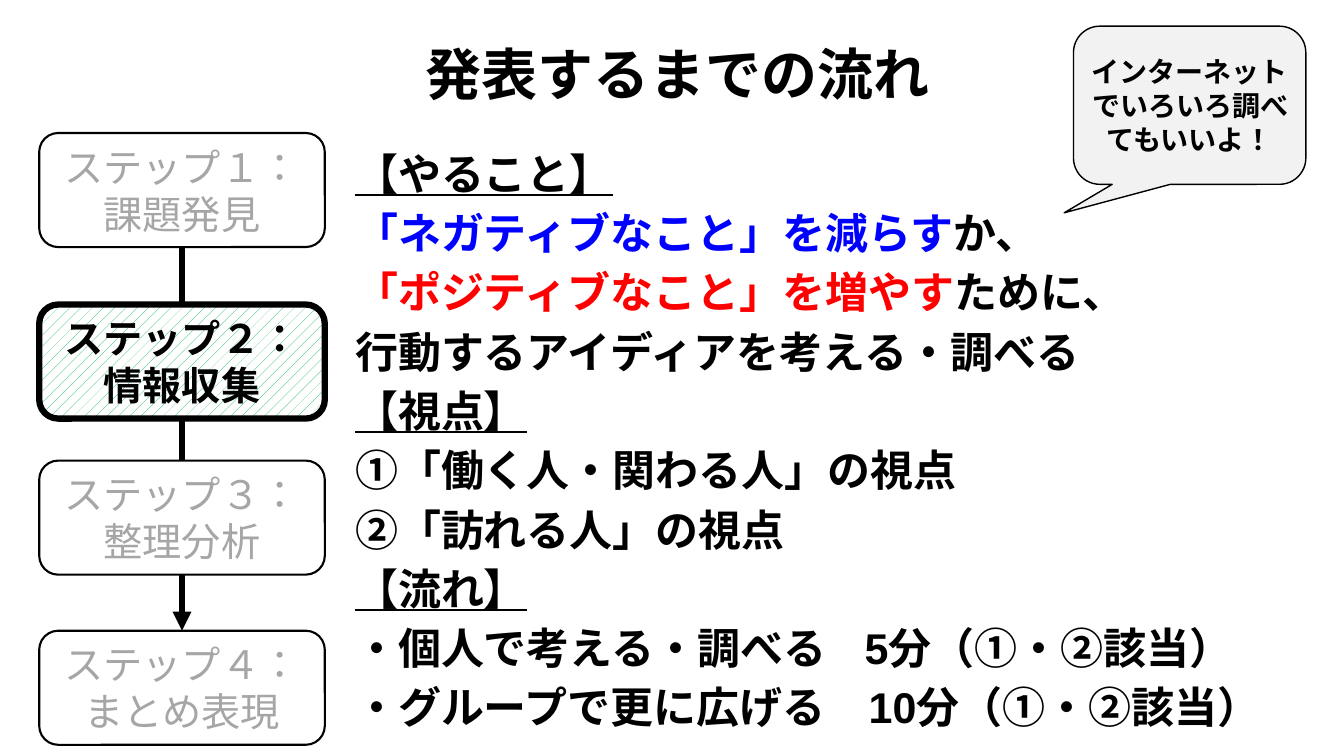
from dataclasses import dataclass

from lxml.etree import SubElement
from pptx import Presentation
from pptx.dml.color import RGBColor
from pptx.enum.dml import MSO_PATTERN
from pptx.enum.lang import MSO_LANGUAGE_ID
from pptx.enum.shapes import MSO_CONNECTOR, MSO_SHAPE
from pptx.enum.text import MSO_ANCHOR, MSO_AUTO_SIZE, PP_ALIGN
from pptx.oxml.ns import qn
from pptx.util import Pt

BLACK, WHITE, GRAY = "000000", "FFFFFF", "A6A6A6"
BLUE, RED, GREEN, PALE = "0000FF", "FF0000", "00B050", "F2F2F2"
HEADING_FONT, STEP_FONT = "Arial", "Noto Sans CJK JP"
STEP_LEFT, STEP_WIDTH, STEP_HEIGHT = 28, 204, 81.5


@dataclass
class Step:
    number: str
    label: str
    top: float
    active: bool = False


@dataclass
class Line:
    text: str
    rest: str = ""
    color: str = BLACK
    underline: bool = False
    tab: float = 0


STEPS = [
    Step("１", "課題発見", 95),
    Step("４", "まとめ表現", 450.5),
    Step("２", "情報収集", 217.5, active=True),
    Step("３", "整理分析", 329),
]

LINES = [
    Line("【やること】", underline=True),
    Line("「ネガティブなこと」を減らす", "か、", BLUE),
    Line("「ポジティブなこと」を増やす", "ために、", RED),
    Line("行動するアイディアを考える・調べる"),
    Line("【視点】", underline=True),
    Line("①「働く人・関わる人」の視点"),
    Line("②「訪れる人」の視点"),
    Line("【流れ】", underline=True),
    Line("・個人で考える・調べる\t5分（①・②該当）", tab=364),
    Line("・グループで更に広げる　10分（①・②該当）"),
]


def rgb(value: str) -> RGBColor:
    """Turn a hex string into a colour."""
    return RGBColor.from_string(value)


def add_span(para, text: str, *, size: float, font: str = HEADING_FONT, color: str = BLACK,
             bold: bool = True, underline: bool = False) -> None:
    """Append formatted text to a paragraph."""
    span = para.add_run()
    span.text = text
    span.font.size = Pt(size)
    span.font.name = font
    span.font.bold = bold
    span.font.underline = underline
    span.font.color.rgb = rgb(color)
    span.font.language_id = MSO_LANGUAGE_ID.JAPANESE
    east_asian = SubElement(span.font._element, qn("a:ea"))
    east_asian.set("typeface", font)


def add_paragraph(frame, index: int):
    """Return the first paragraph of a frame, or a new one after it."""
    return frame.add_paragraph() if index else frame.paragraphs[0]


def add_text_frame(page, left: float, top: float, width: float, height: float):
    """Add a wrapping text box and return its frame."""
    frame = page.shapes.add_textbox(Pt(left), Pt(top), Pt(width), Pt(height)).text_frame
    frame.word_wrap = True
    frame.auto_size = MSO_AUTO_SIZE.SHAPE_TO_FIT_TEXT
    frame.margin_left = frame.margin_right = Pt(9.6)
    frame.margin_top = frame.margin_bottom = Pt(4.8)
    return frame


def add_box(page, kind, left: float, top: float, width: float, height: float,
            texts: list[str], *, fill: str, weight: float, **text_format):
    """Add an outlined shape with centred text."""
    box = page.shapes.add_shape(kind, Pt(left), Pt(top), Pt(width), Pt(height))
    box.shadow.inherit = False
    box.fill.solid()
    box.fill.fore_color.rgb = rgb(fill)
    box.line.color.rgb = rgb(BLACK)
    box.line.width = Pt(weight)
    box.text_frame.word_wrap = True
    box.text_frame.vertical_anchor = MSO_ANCHOR.MIDDLE
    for index, text in enumerate(texts):
        para = add_paragraph(box.text_frame, index)
        para.alignment = PP_ALIGN.CENTER
        add_span(para, text, **text_format)
    return box


def add_step(page, step: Step):
    """Add one step of the flow."""
    box = add_box(page, MSO_SHAPE.ROUNDED_RECTANGLE, STEP_LEFT, step.top, STEP_WIDTH, STEP_HEIGHT,
                  [f"ステップ{step.number}：", step.label], fill=WHITE,
                  weight=4.5 if step.active else 1.5, size=28, font=STEP_FONT,
                  color=BLACK if step.active else GRAY, bold=step.active)
    if step.active:
        box.fill.patterned()
        box.fill.pattern = MSO_PATTERN.PERCENT_10
        box.fill.fore_color.rgb = rgb(GREEN)
        box.fill.back_color.rgb = rgb(WHITE)
    return box


def add_arrow(page, first, last) -> None:
    """Join the bottom of one box to the top of another with an arrow."""
    arrow = page.shapes.add_connector(MSO_CONNECTOR.STRAIGHT, 0, 0, 0, 0)
    arrow.begin_connect(first, 2)
    arrow.end_connect(last, 0)
    arrow.line.color.rgb = rgb(BLACK)
    arrow.line.width = Pt(4.5)
    SubElement(arrow.line._get_or_add_ln(), qn("a:tailEnd")).set("type", "triangle")
    SubElement(arrow._element.spPr, qn("a:effectLst"))


def add_lines(page) -> None:
    """Add the task list beside the flow."""
    frame = add_text_frame(page, 244, 95, 716, 437)
    for index, line in enumerate(LINES):
        para = add_paragraph(frame, index)
        para.line_spacing = 1.15
        if line.tab:
            tabs = SubElement(para._p.get_or_add_pPr(), qn("a:tabLst"))
            SubElement(tabs, qn("a:tab"), pos=str(Pt(line.tab)), algn="l")
        add_span(para, line.text, size=30.7, color=line.color, underline=line.underline)
        if line.rest:
            add_span(para, line.rest, size=30.7)


def main() -> None:
    """Build the slide and save it."""
    deck = Presentation()
    deck.slide_width, deck.slide_height = Pt(960), Pt(540)
    page = deck.slides.add_slide(deck.slide_layouts[6])

    title = add_text_frame(page, 46, -0.7, 876, 82).paragraphs[0]
    title.alignment = PP_ALIGN.CENTER
    title.line_spacing = 1.5
    add_span(title, "発表するまでの流れ", size=40)

    first, last = [add_step(page, step) for step in STEPS[:2]]
    add_arrow(page, first, last)
    for step in STEPS[2:]:
        add_step(page, step)

    add_lines(page)
    bubble = add_box(page, MSO_SHAPE.ROUNDED_RECTANGULAR_CALLOUT, 766.8, 18.7, 166, 113,
                     ["インターネットでいろいろ調べてもいいよ！"], fill=PALE, weight=1,
                     size=20, font=STEP_FONT)
    bubble.adjustments[0] = -0.54
    bubble.adjustments[1] = 0.68
    deck.save("out.pptx")


if __name__ == "__main__":
    main()
